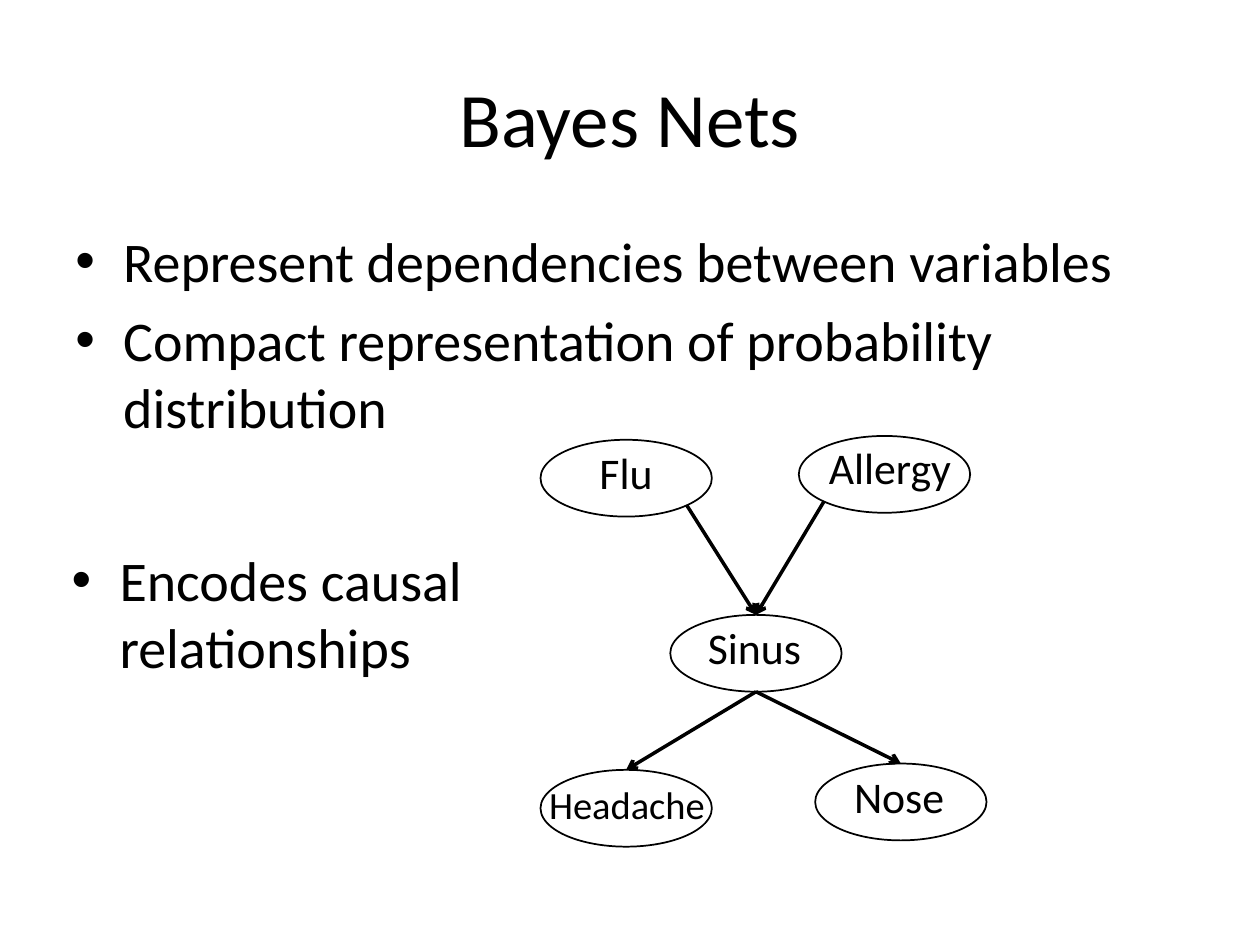
from dataclasses import dataclass
from math import cos, radians, sin

from lxml.etree import SubElement
from pptx import Presentation
from pptx.dml.color import RGBColor
from pptx.enum.shapes import MSO_CONNECTOR, MSO_SHAPE
from pptx.enum.text import MSO_ANCHOR, PP_ALIGN
from pptx.oxml.ns import qn
from pptx.util import Inches, Pt


@dataclass(frozen=True)
class Theme:
    font: str = "Calibri"
    ink: RGBColor = RGBColor(0, 0, 0)
    title: float = 44
    body: float = 32
    label: float = 25
    small_label: float = 22
    outline: float = 1
    arrow: float = 2


THEME = Theme()
NODE_W, NODE_H = 1.36, 0.61
TOP, BOTTOM, LOWER_LEFT, LOWER_RIGHT = 270, 90, 135, 45  # degrees, clockwise from right


@dataclass(frozen=True)
class Node:
    text: str
    left: float
    top: float
    label_box: tuple[float, float, float, float]
    size: float = THEME.label

    def site(self, angle: float) -> tuple[float, float]:
        """Point on the outline at the given angle."""
        a = radians(angle)
        return (self.left + NODE_W / 2 * (1 + cos(a)),
                self.top + NODE_H / 2 * (1 + sin(a)))


@dataclass(frozen=True)
class Edge:
    start: Node
    start_angle: float
    end: Node


def add_text(s, paragraphs: list[str], box: tuple[float, float, float, float], *,
             size: float, align=PP_ALIGN.LEFT, anchor=MSO_ANCHOR.TOP,
             bullet: bool = False, wrap: bool = True) -> None:
    tf = s.shapes.add_textbox(*map(Inches, box)).text_frame
    tf.word_wrap = wrap
    tf.vertical_anchor = anchor
    for i, text in enumerate(paragraphs):
        p = tf.paragraphs[0] if i == 0 else tf.add_paragraph()
        p.alignment = align
        r = p.add_run()
        r.text = text
        r.font.name, r.font.size = THEME.font, Pt(size)
        r.font.color.rgb = THEME.ink
        if bullet:
            p.space_before = Pt(size * 0.2)
            pPr = p._p.get_or_add_pPr()
            indent = Inches(0.38)
            pPr.set("marL", str(indent))
            pPr.set("indent", str(-indent))
            SubElement(pPr, qn("a:buFont"), typeface="Arial")
            SubElement(pPr, qn("a:buChar"), char="•")


def add_node(s, node: Node) -> None:
    sp = s.shapes.add_shape(MSO_SHAPE.OVAL, Inches(node.left), Inches(node.top),
                            Inches(NODE_W), Inches(NODE_H))
    sp.shadow.inherit = False
    sp.fill.background()
    sp.line.color.rgb = THEME.ink
    sp.line.width = Pt(THEME.outline)
    add_text(s, [node.text], node.label_box, size=node.size, wrap=False)


def add_arrow(s, edge: Edge) -> None:
    ends = edge.start.site(edge.start_angle) + edge.end.site(TOP)
    cx = s.shapes.add_connector(MSO_CONNECTOR.STRAIGHT, *map(Inches, ends))
    cx.line.color.rgb = THEME.ink
    cx.line.width = Pt(THEME.arrow)
    SubElement(cx.line._get_or_add_ln(), qn("a:tailEnd"), type="arrow")
    SubElement(cx._element.spPr, qn("a:effectLst"))


def main() -> None:
    prs = Presentation()
    prs.slide_width, prs.slide_height = Inches(10), Inches(7.5)
    s = prs.slides.add_slide(prs.slide_layouts[6])

    # Title and bullets
    add_text(s, ["Bayes Nets"], (0.5, 0.3, 9, 1.25), size=THEME.title,
             align=PP_ALIGN.CENTER, anchor=MSO_ANCHOR.MIDDLE)
    add_text(s, ["Represent dependencies between variables",
                 "Compact representation of probability distribution"],
             (0.5, 1.75, 9, 4.95), size=THEME.body, bullet=True)
    add_text(s, ["Encodes causal relationships"], (0.47, 4.28, 4.15, 3),
             size=THEME.body, bullet=True)

    # Network
    flu = Node("Flu", 4.29, 3.49, (4.66, 3.49, 0.87, 0.52))
    allergy = Node("Allergy", 6.34, 3.46, (6.48, 3.45, 1.35, 0.52))
    sinus = Node("Sinus", 5.32, 4.88, (5.52, 4.88, 1.06, 0.52))
    headache = Node("Headache", 4.29, 6.11, (4.26, 6.15, 1.69, 0.47), THEME.small_label)
    nose = Node("Nose", 6.47, 6.06, (6.68, 6.06, 1.13, 0.52))
    for node in (flu, allergy, sinus, headache, nose):
        add_node(s, node)
    for edge in (Edge(flu, LOWER_RIGHT, sinus), Edge(allergy, LOWER_LEFT, sinus),
                 Edge(sinus, BOTTOM, headache), Edge(sinus, BOTTOM, nose)):
        add_arrow(s, edge)

    prs.save("out.pptx")


if __name__ == "__main__":
    main()
